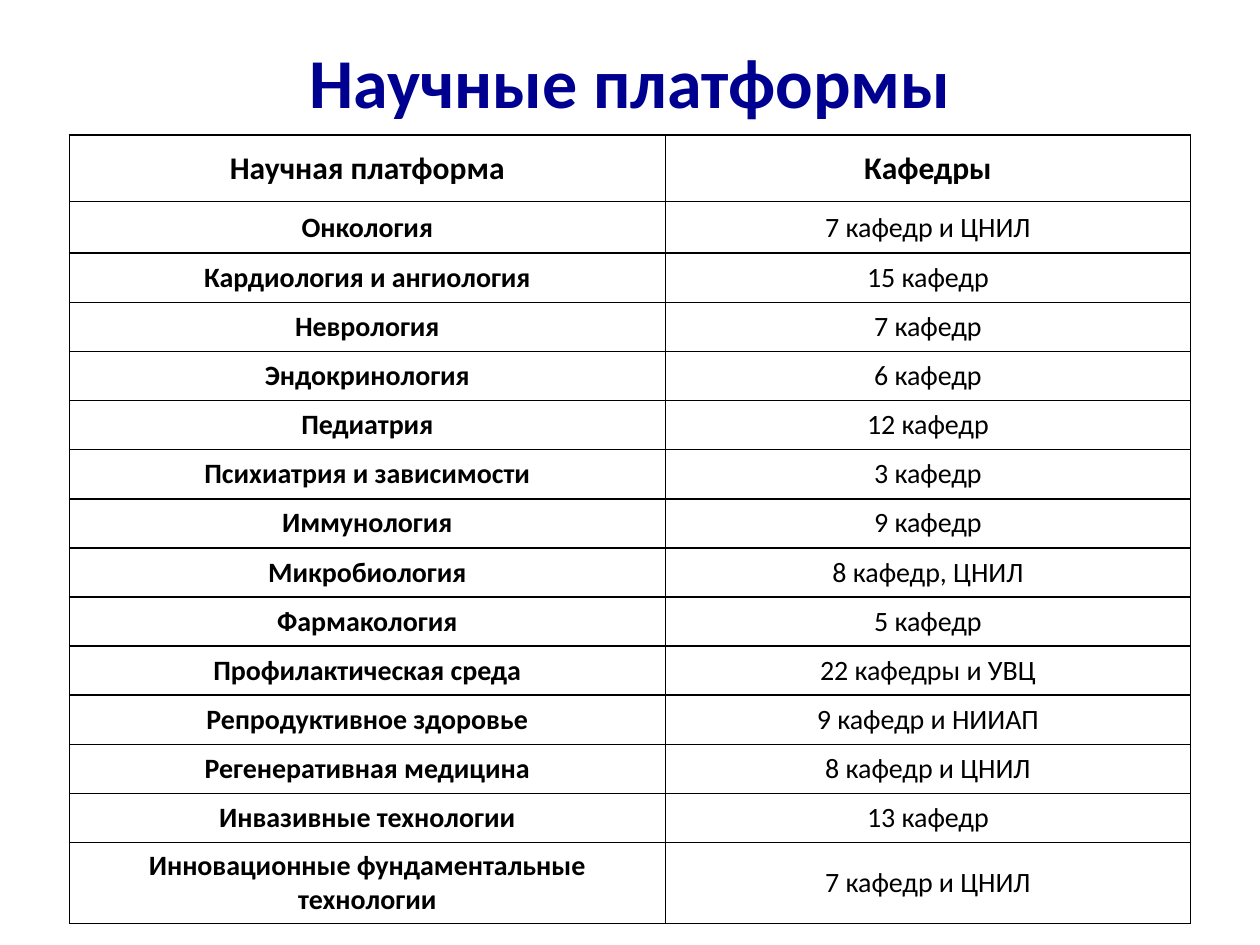
from lxml.etree import SubElement
from pptx import Presentation
from pptx.dml.color import RGBColor
from pptx.enum.text import MSO_ANCHOR, PP_ALIGN
from pptx.oxml.ns import qn
from pptx.util import Inches, Pt

TITLE = "Научные платформы"
HEADER = ("Научная платформа", "Кафедры")
PLATFORMS = [
    ("Онкология", "7 кафедр и ЦНИЛ"),
    ("Кардиология и ангиология", "15 кафедр"),
    ("Неврология", "7 кафедр"),
    ("Эндокринология", "6 кафедр"),
    ("Педиатрия", "12 кафедр"),
    ("Психиатрия и зависимости", "3 кафедр"),
    ("Иммунология", "9 кафедр"),
    ("Микробиология", "8 кафедр, ЦНИЛ"),
    ("Фармакология", "5 кафедр"),
    ("Профилактическая среда", "22 кафедры и УВЦ"),
    ("Репродуктивное здоровье", "9 кафедр и НИИАП"),
    ("Регенеративная медицина", "8 кафедр и ЦНИЛ"),
    ("Инвазивные технологии", "13 кафедр"),
    ("Инновационные фундаментальные технологии", "7 кафедр и ЦНИЛ"),
]
FONT = "Calibri"
NAVY, BLACK = "000090", "000000"
COLUMN_WIDTHS = (4.73, 4.17)
ROW_HEIGHTS = [0.53, 0.41] + [0.39] * (len(PLATFORMS) - 1)
TIGHT_ROWS = range(1, 10)


def format_text(text_frame, size, color, bold):
    """Centre the text and set its font."""
    for paragraph in text_frame.paragraphs:
        paragraph.alignment = PP_ALIGN.CENTER
        for run in paragraph.runs:
            run.font.name = FONT
            run.font.size = Pt(size)
            run.font.bold = bold
            run.font.color.rgb = RGBColor.from_string(color)


def add_borders(cell, color, width):
    """Draw a solid line on all four sides of a cell."""
    properties = cell._tc.get_or_add_tcPr()
    for side in ("a:lnL", "a:lnR", "a:lnT", "a:lnB"):
        line = SubElement(properties, qn(side), w=str(Pt(width)))
        fill = SubElement(line, qn("a:solidFill"))
        SubElement(fill, qn("a:srgbClr"), val=color)


def add_title(slide):
    """Place and format the slide title."""
    title = slide.shapes.title
    title.left, title.top = Inches(0.5), Inches(0.14)
    title.width, title.height = Inches(9), Inches(0.99)
    title.text_frame.text = TITLE
    title.text_frame.vertical_anchor = MSO_ANCHOR.MIDDLE
    format_text(title.text_frame, 40, NAVY, True)


def fill_cell(cell, text, row, column):
    """Write one table cell and format it for its row and column."""
    horizontal, vertical = (0.08, 0) if row in TIGHT_ROWS else (0.1, 0.05)
    cell.margin_left = cell.margin_right = Inches(horizontal)
    cell.margin_top = cell.margin_bottom = Inches(vertical)
    cell.vertical_anchor = MSO_ANCHOR.MIDDLE
    cell.text_frame.text = text
    format_text(cell.text_frame, 16 if row else 18, BLACK, row == 0 or column == 0)
    add_borders(cell, BLACK, 1)
    cell.fill.background()


def add_platform_table(slide):
    """Build the table of platforms and departments."""
    rows = [HEADER] + PLATFORMS
    table = slide.shapes.add_table(
        len(rows), len(HEADER), Inches(0.55), Inches(1.07),
        Inches(sum(COLUMN_WIDTHS)), Inches(sum(ROW_HEIGHTS)),
    ).table
    table.first_row = table.horz_banding = False
    for column, width in zip(table.columns, COLUMN_WIDTHS):
        column.width = Inches(width)
    for row, height in zip(table.rows, ROW_HEIGHTS):
        row.height = Inches(height)
    for row, texts in enumerate(rows):
        for column, text in enumerate(texts):
            fill_cell(table.cell(row, column), text, row, column)


def main():
    """Build and save the slide."""
    presentation = Presentation()
    presentation.slide_width, presentation.slide_height = Inches(10), Inches(7.5)
    slide = presentation.slides.add_slide(presentation.slide_layouts[5])
    add_title(slide)
    add_platform_table(slide)
    presentation.save("out.pptx")


if __name__ == "__main__":
    main()
